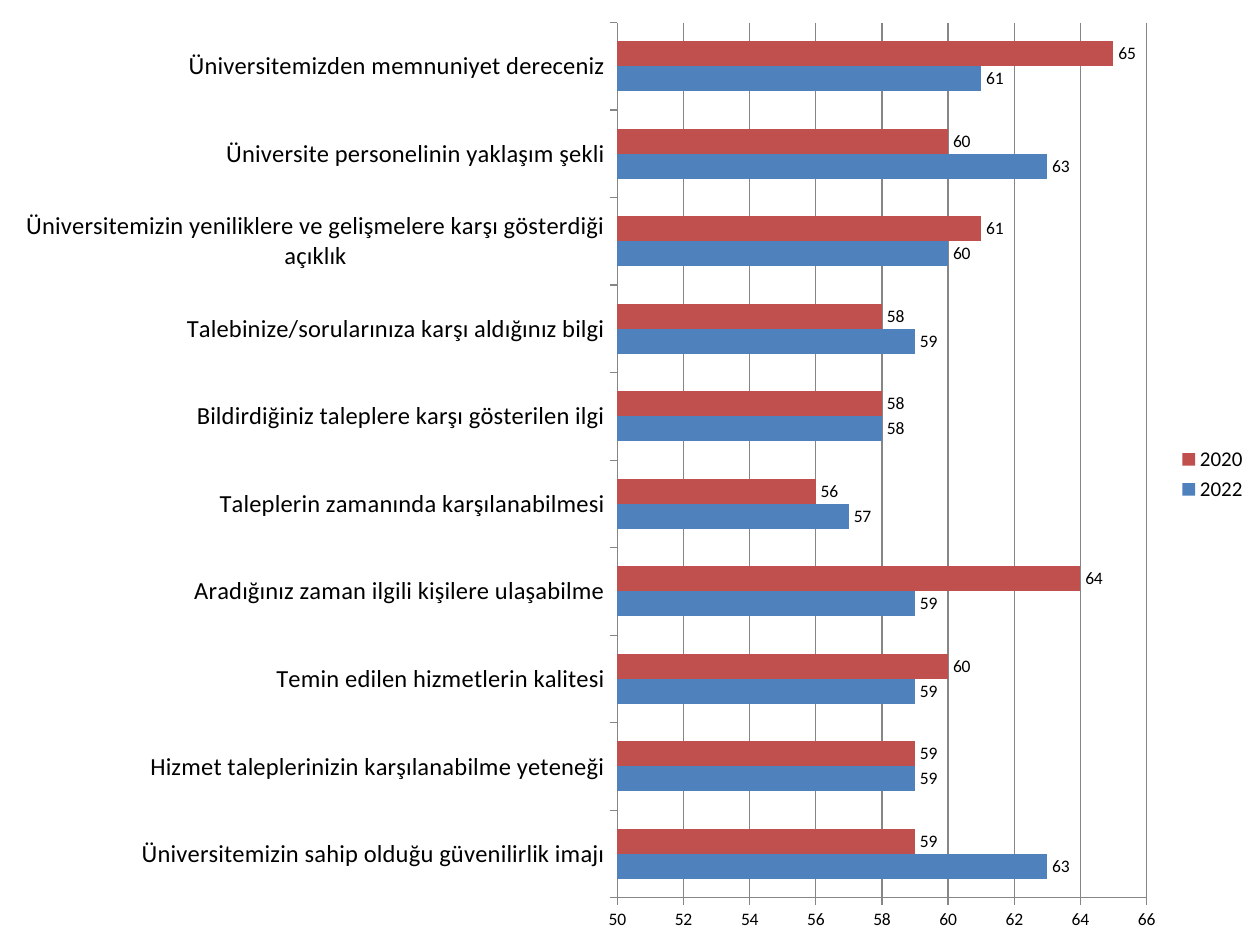
from dataclasses import dataclass

from lxml.etree import SubElement
from pptx import Presentation
from pptx.chart.data import CategoryChartData
from pptx.dml.color import RGBColor
from pptx.enum.chart import XL_CHART_TYPE, XL_LABEL_POSITION, XL_LEGEND_POSITION, XL_TICK_MARK
from pptx.oxml.ns import qn
from pptx.slide import Slide
from pptx.util import Inches, Pt

CATEGORIES = [
    "Üniversitemizin sahip olduğu güvenilirlik imajı",
    "Hizmet taleplerinizin karşılanabilme yeteneği",
    "Temin edilen hizmetlerin kalitesi",
    "Aradığınız zaman ilgili kişilere ulaşabilme",
    "Taleplerin zamanında karşılanabilmesi",
    "Bildirdiğiniz taleplere karşı gösterilen ilgi",
    "Talebinize/sorularınıza karşı aldığınız bilgi",
    "Üniversitemizin yeniliklere ve gelişmelere karşı gösterdiği açıklık",
    "Üniversite personelinin yaklaşım şekli",
    "Üniversitemizden memnuniyet dereceniz",
]
SCORES = {
    "2022": ([63, 59, 59, 59, 57, 58, 59, 60, 63, 61], "4F81BD"),
    "2020": ([59, 59, 60, 64, 56, 58, 58, 61, 60, 65], "C0504D"),
}


def colour(code):
    return RGBColor.from_string(code)


def apply(target, values):
    for name, value in values.items():
        setattr(target, name, value)


@dataclass
class SurveyPage:
    page: Slide
    font: str = "Calibri"
    ink: str = "000000"
    rule: str = "868686"

    def style_font(self, font, size):
        apply(font, {"name": self.font, "size": Pt(size), "bold": False})
        font.color.rgb = colour(self.ink)

    def style_line(self, line):
        line.width = Pt(0.75)
        line.color.rgb = colour(self.rule)

    def style_axis(self, axis, size, values):
        apply(axis, {"major_tick_mark": XL_TICK_MARK.OUTSIDE,
                     "minor_tick_mark": XL_TICK_MARK.NONE, **values})
        self.style_font(axis.tick_labels.font, size)
        self.style_line(axis.format.line)

    def place_plot(self, chart, frame):
        area = chart.plots[0]._element.getparent()
        layout = area.find(qn("c:layout"))
        if layout is None:
            layout = SubElement(area, qn("c:layout"))
            area.insert(0, layout)
        manual = SubElement(layout, qn("c:manualLayout"))
        settings = {"layoutTarget": "inner", "xMode": "edge", "yMode": "edge", **frame}
        for name, value in settings.items():
            SubElement(manual, qn(f"c:{name}")).set("val", str(value))

    def add_bar_chart(self, box, categories, scores):
        data = CategoryChartData(number_format="0")
        data.categories = categories
        for name, (values, _) in scores.items():
            data.add_series(name, values)
        chart = self.page.shapes.add_chart(
            XL_CHART_TYPE.BAR_CLUSTERED, *map(Inches, box), data).chart
        apply(chart, {"has_title": False, "has_legend": True})
        self.style_font(chart.font, 10)
        apply(chart.legend, {"position": XL_LEGEND_POSITION.RIGHT, "include_in_layout": False})
        self.style_font(chart.legend.font, 12)
        plot = chart.plots[0]
        apply(plot, {"gap_width": 150, "overlap": 0, "vary_by_categories": False})
        for series, (_, fill) in zip(plot.series, scores.values()):
            series.format.fill.solid()
            series.format.fill.fore_color.rgb = colour(fill)
            labels = series.data_labels
            apply(labels, {"show_value": True, "number_format": "0",
                           "number_format_is_linked": False,
                           "position": XL_LABEL_POSITION.OUTSIDE_END})
            self.style_font(labels.font, 10)
        self.style_axis(chart.category_axis, 14, {"has_major_gridlines": False})
        axis = chart.value_axis
        self.style_axis(axis, 10, {"has_major_gridlines": True, "minimum_scale": 50,
                                   "maximum_scale": 66, "major_unit": 2})
        self.style_line(axis.major_gridlines.format.line)
        apply(axis.tick_labels, {"number_format": "0", "number_format_is_linked": False})
        self.place_plot(chart, {"x": 0.49, "y": 0.02, "w": 0.42, "h": 0.93})


def main():
    deck = Presentation()
    apply(deck, {"slide_width": Inches(10), "slide_height": Inches(7.5)})
    survey = SurveyPage(deck.slides.add_slide(deck.slide_layouts[6]))
    survey.add_bar_chart((0, 0.03, 10, 7.47), CATEGORIES, SCORES)
    deck.save("out.pptx")


if __name__ == "__main__":
    main()
